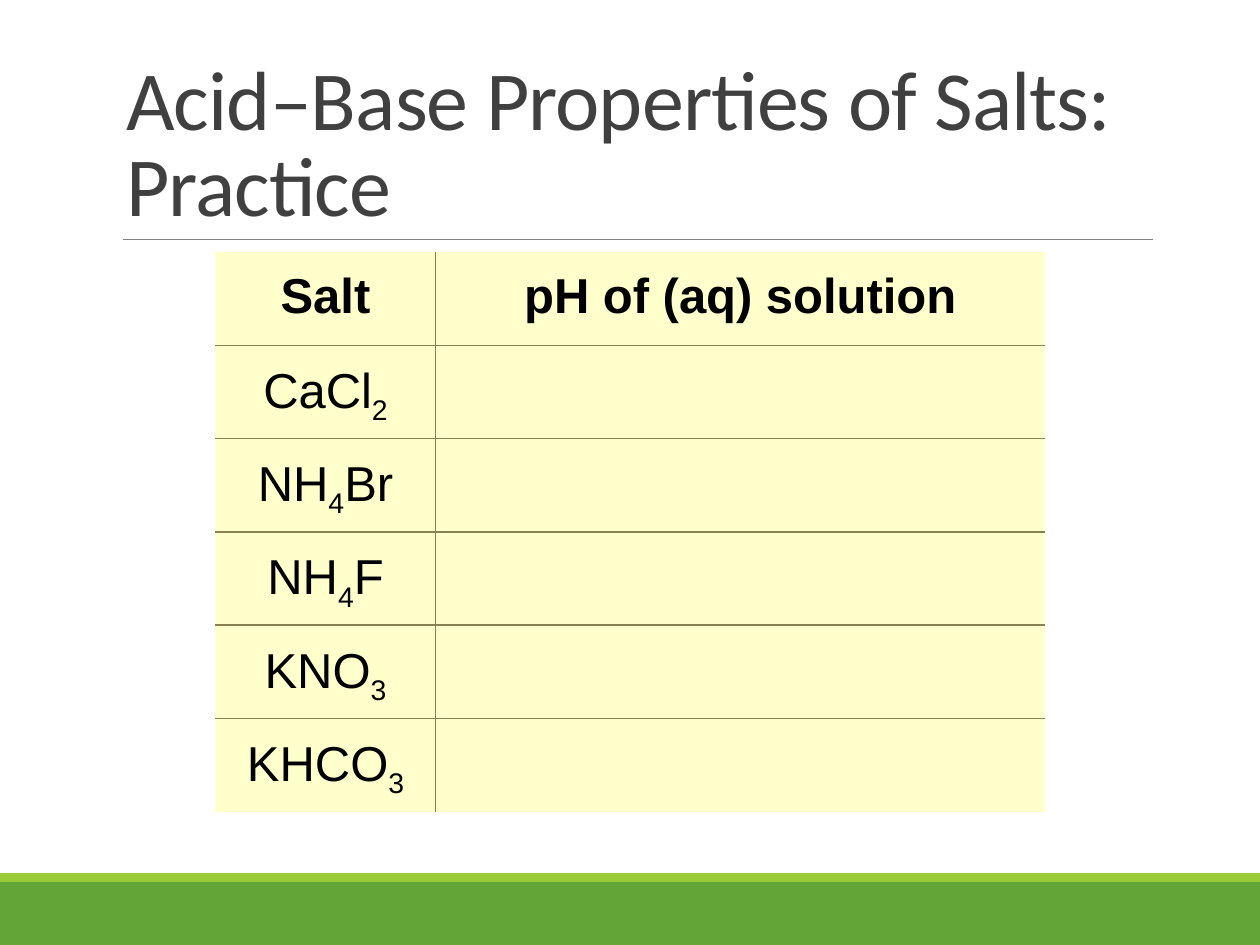
from lxml import etree
from pptx import Presentation
from pptx.dml.color import RGBColor
from pptx.enum.shapes import MSO_CONNECTOR, MSO_SHAPE
from pptx.enum.text import MSO_ANCHOR, PP_ALIGN
from pptx.oxml.ns import qn
from pptx.util import Pt

RECT = MSO_SHAPE.RECTANGLE
LINE = MSO_CONNECTOR.STRAIGHT
MIDDLE = MSO_ANCHOR.MIDDLE
BOTTOM = MSO_ANCHOR.BOTTOM
CENTER = PP_ALIGN.CENTER

HEAD = {"name": "Arial", "size": Pt(28), "bold": True}
BODY = {**HEAD, "bold": False}
TITLE = {"name": "Calibri", "size": Pt(48), "bold": False}
ROWS = [
    ("Salt", "pH of (aq) solution"),
    ("CaCl2", ""),
    ("NH4Br", ""),
    ("NH4F", ""),
    ("KNO3", ""),
    ("KHCO3", ""),
]


def tint(code):
    return RGBColor.from_string(code)


def style(font, form, color):
    for key, value in form.items():
        setattr(font, key, value)
    font.color.rgb = tint(color)


def add_run(para, text, form, color, extra):
    run = para.add_run()
    run.text = text
    style(run.font, form, color)
    props = run.font._element
    for key, value in extra.items():
        props.set(key, value)


def add_edge(cell, side, shown):
    props = cell._tc.get_or_add_tcPr()
    edge = etree.SubElement(props, qn(f"a:ln{side}"), w=str(Pt(1)))
    if shown:
        fill = etree.SubElement(edge, qn("a:solidFill"))
        etree.SubElement(fill, qn("a:srgbClr"), val="89814E")
    else:
        etree.SubElement(edge, qn("a:noFill"))


def add_bar(slide, box, color):
    bar = slide.shapes.add_shape(RECT, *map(Pt, box))
    bar.shadow.inherit = False
    bar.fill.solid()
    bar.fill.fore_color.rgb = tint(color)
    bar.line.fill.background()


def add_base(slide, box):
    left, top, width, height = box
    strip = 5
    add_bar(slide, (left, top + strip, width, height - strip), "63A537")
    add_bar(slide, (left, top, width, strip), "99CB38")


def add_title(slide, box, text):
    left, top, width, height = box
    end = top + height
    rule = slide.shapes.add_connector(
        LINE, Pt(left + 5.5), Pt(end), Pt(left + width), Pt(end))
    rule.line.color.rgb = tint("808080")
    rule.line.width = Pt(0.5)
    etree.SubElement(rule._element.spPr, qn("a:effectLst"))
    frame = slide.shapes.add_textbox(*map(Pt, box)).text_frame
    frame.word_wrap = True
    frame.vertical_anchor = BOTTOM
    para = frame.paragraphs[0]
    para.line_spacing = 0.85
    add_run(para, text, TITLE, "404040", {"spc": "-50"})


def fill_cell(cell, text, form):
    cell.fill.solid()
    cell.fill.fore_color.rgb = tint("FFFFCC")
    cell.vertical_anchor = MIDDLE
    para = cell.text_frame.paragraphs[0]
    para.alignment = CENTER
    para.line_spacing = 0.9
    style(para.font, form, "000000")
    if form is HEAD:
        add_run(para, text, form, "000000", {})
        return
    start = 0
    for pos, char in enumerate(text):
        if char.isdigit():
            add_run(para, text[start:pos], form, "000000", {})
            add_run(para, char, form, "000000", {"baseline": "-25000"})
            start = pos + 1
    if text[start:]:
        add_run(para, text[start:], form, "000000", {})


def add_salts(slide, box, rows, first):
    left, top, width, height = box
    count = len(rows)
    table = slide.shapes.add_table(count, 2, *map(Pt, box)).table
    table.first_row = False
    table.horz_banding = False
    for col, size in zip(table.columns, (first, width - first)):
        col.width = Pt(size)
    for row, texts in enumerate(rows):
        table.rows[row].height = Pt(height / count)
        for col, text in enumerate(texts):
            cell = table.cell(row, col)
            inner = {"L": col > 0, "R": col < 1,
                     "T": row > 0, "B": row < count - 1}
            for side, shown in inner.items():
                add_edge(cell, side, shown)
            fill_cell(cell, text, BODY if row else HEAD)


def main():
    deck = Presentation()
    deck.slide_width, deck.slide_height = Pt(720), Pt(540)
    slide = deck.slides.add_slide(deck.slide_layouts[6])
    add_base(slide, (0, 499, 720, 41))
    add_salts(slide, (123, 144, 474, 320), ROWS, 126)
    add_title(slide, (65, 22.5, 594, 114.5),
              "Acid–Base Properties of Salts: Practice")
    deck.save("out.pptx")


if __name__ == "__main__":
    main()
